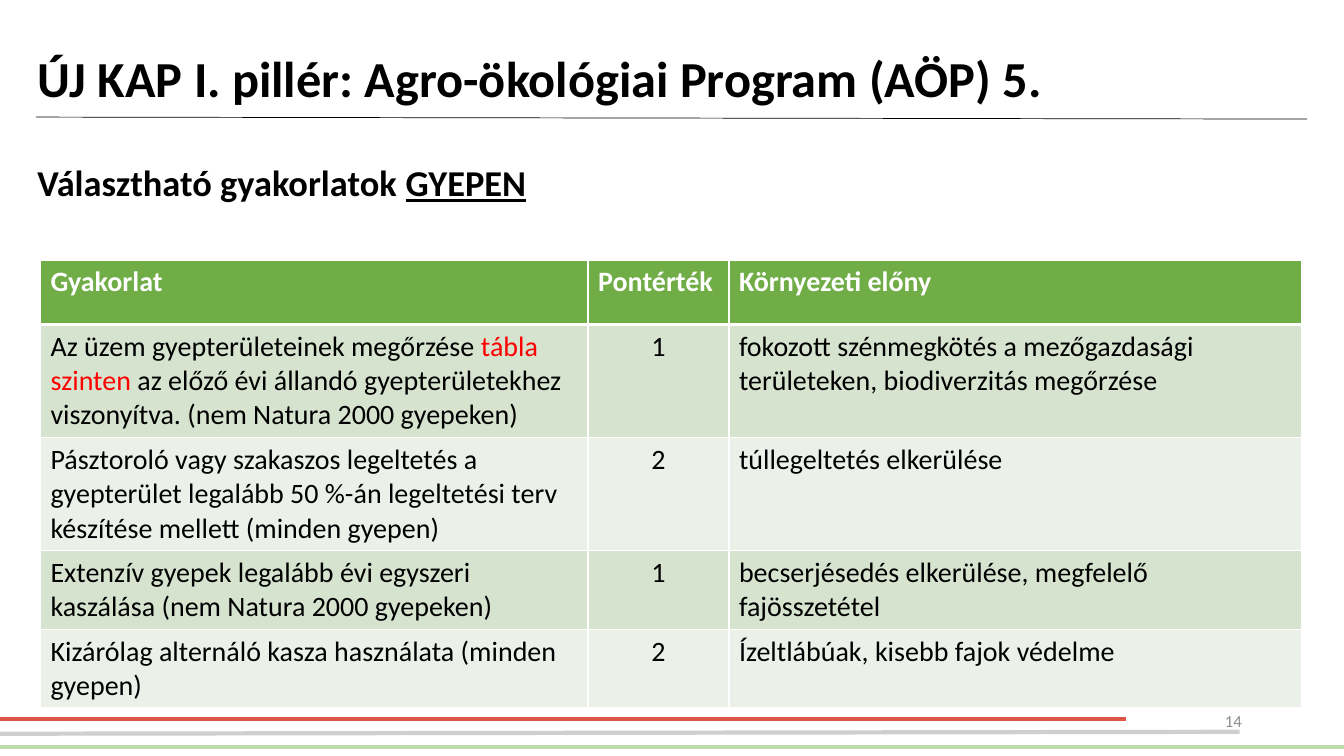
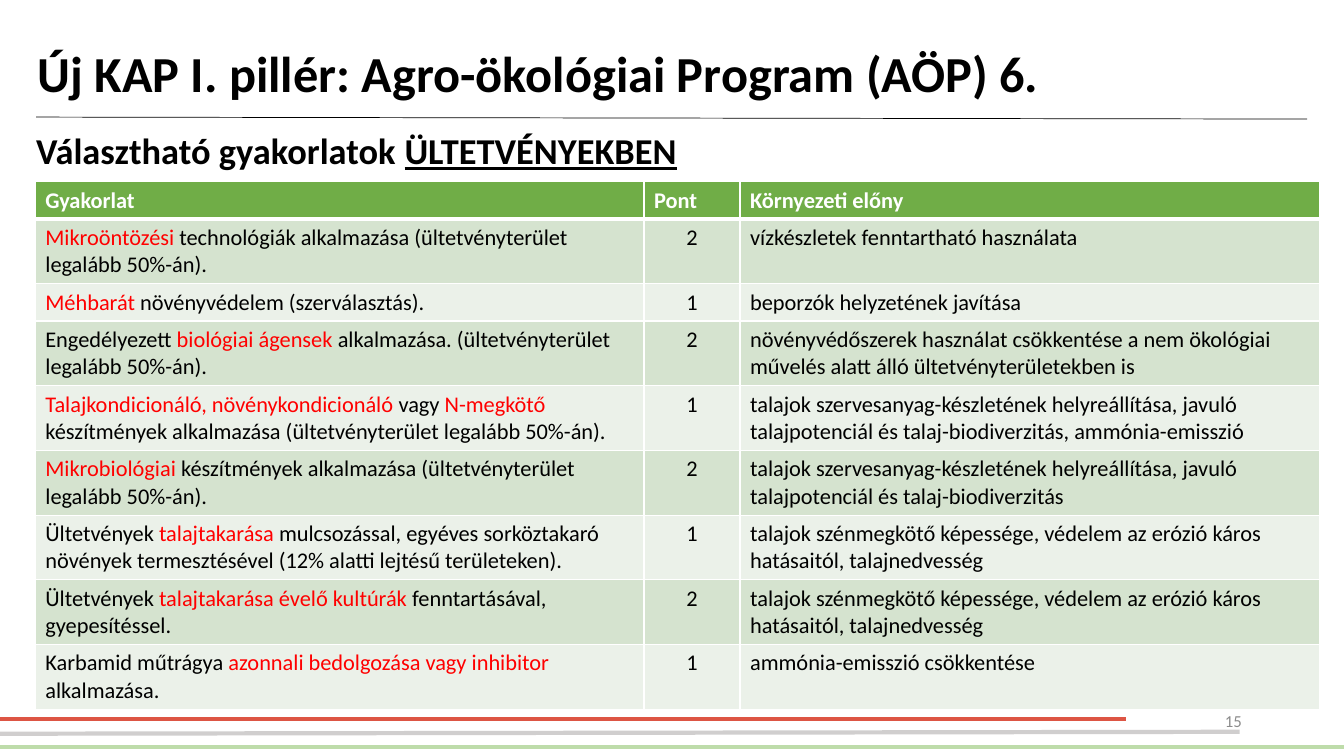
from lxml import etree
from pptx import Presentation
from pptx.dml.color import RGBColor
from pptx.enum import shapes, text
from pptx.oxml import ns, parse_xml
from pptx.util import Cm, Pt

BLACK, WHITE, RED, GREY = "000000", "FFFFFF", "FF0000", "8C8C8C"
HEADER_GREEN, BANDS = "70AD47", ("D5E3CF", "EBF1E9")
# Start x, start y, end x, end y in centimetres, colour, width in points
LINES = [
    (0, 18.11, 28.37, 18.11, "DD5544", 3),
    (0, 18.82, 33.87, 18.82, "BEDCAA", 3),
    (0, 18.49, 31.24, 18.44, "D0CECE", 3),
    (0.91, 2.95, 32.94, 3, BLACK, 0.5),
]

GRASSLAND = [
    ("Gyakorlat", "Pontérték", "Környezeti előny"),
    ("Az üzem gyepterületeinek megőrzése |tábla szinten |az előző évi állandó "
     "gyepterületekhez viszonyítva. (nem Natura 2000 gyepeken)", "1",
     "fokozott szénmegkötés a mezőgazdasági területeken, biodiverzitás megőrzése"),
    ("Pásztoroló vagy szakaszos legeltetés a gyepterület legalább 50 %-án "
     "legeltetési terv készítése mellett (minden gyepen)", "2",
     "túllegeltetés elkerülése"),
    ("Extenzív gyepek legalább évi egyszeri kaszálása (nem Natura 2000 gyepeken)", "1",
     "becserjésedés elkerülése, megfelelő fajösszetétel"),
    ("Kizárólag alternáló kasza használata (minden gyepen)", "2",
     "Ízeltlábúak, kisebb fajok védelme"),
]

SOIL_COVER_BENEFIT = ("talajok szénmegkötő képessége, védelem az erózió káros "
                      "hatásaitól, talajnedvesség")
SOIL_BENEFIT = ("talajok szervesanyag-készletének helyreállítása, javuló "
                "talajpotenciál és talaj-biodiverzitás")
PLANTATIONS = [
    ("Gyakorlat", "Pont", "Környezeti előny"),
    ("|Mikroöntözési |technológiák alkalmazása (ültetvényterület legalább 50%-án).",
     "2", "vízkészletek fenntartható használata"),
    ("|Méhbarát |növényvédelem (szerválasztás).", "1", "beporzók helyzetének javítása"),
    ("Engedélyezett |biológiai ágensek |alkalmazása. (ültetvényterület legalább 50%-án).",
     "2", "növényvédőszerek használat csökkentése a nem ökológiai művelés alatt álló "
     "ültetvényterületekben is"),
    ("|Talajkondicionáló, növénykondicionáló |vagy |N-megkötő| készítmények alkalmazása "
     "(ültetvényterület legalább 50%-án).", "1", SOIL_BENEFIT + ", ammónia-emisszió"),
    ("|Mikrobiológiai| készítmények alkalmazása (ültetvényterület legalább 50%-án).",
     "2", SOIL_BENEFIT),
    ("Ültetvények |talajtakarása |mulcsozással, egyéves sorköztakaró növények "
     "termesztésével (12% alatti lejtésű területeken).", "1", SOIL_COVER_BENEFIT),
    ("Ültetvények |talajtakarása évelő kultúrák |fenntartásával, gyepesítéssel.",
     "2", SOIL_COVER_BENEFIT),
    ("Karbamid műtrágya |azonnali bedolgozása vagy inhibitor |alkalmazása.",
     "1", "ammónia-emisszió csökkentése"),
]


def color(value):
    return RGBColor.from_string(value)


def write(frame, content, size, fill=BLACK, bold=False, align=text.PP_ALIGN.LEFT,
          accent=None, underline=False, spacing=None):
    """Write one paragraph; every second part between bars is emphasised."""
    paragraph = frame.paragraphs[0]
    paragraph.alignment = align
    if spacing:
        paragraph.line_spacing = spacing
    for index, part in enumerate(content.split("|")):
        if not part:
            continue
        emphasised = index % 2 == 1
        run = paragraph.add_run()
        run.text = part
        font = run.font
        font.name, font.size, font.bold = "Calibri", Pt(size), bold
        font.color.rgb = color(accent if emphasised and accent else fill)
        if emphasised and underline:
            font.underline = True


def set_borders(cell, top, bottom):
    """Draw white borders; top and bottom are widths in points."""
    properties = cell._tc.get_or_add_tcPr()
    for side, width in (("L", 1), ("R", 1), ("T", top), ("B", bottom)):
        properties.append(parse_xml(
            f'<a:ln{side} {ns.nsdecls("a")} w="{Pt(width)}"><a:solidFill>'
            f'<a:srgbClr val="{WHITE}"/></a:solidFill></a:ln{side}>'))


class Deck:
    def __init__(self):
        self.presentation = Presentation()
        self.presentation.slide_width = Cm(33.87)
        self.presentation.slide_height = Cm(19.05)
        self.slide = None

    def new_slide(self, title, title_top, title_height, number):
        self.slide = self.presentation.slides.add_slide(self.presentation.slide_layouts[6])
        for line in LINES:
            self.line(*line)
        self.text_box(title, 0.7, title_top, 32.4, title_height, size=36, bold=True,
                      spacing=0.9)
        self.text_box(str(number), 23.93, 17.65, 7.62, 1.02, size=12, fill=GREY,
                      align=text.PP_ALIGN.RIGHT)

    def line(self, x1, y1, x2, y2, stroke, width):
        connector = self.slide.shapes.add_connector(
            shapes.MSO_CONNECTOR.STRAIGHT, Cm(x1), Cm(y1), Cm(x2), Cm(y2))
        connector.line.color.rgb = color(stroke)
        connector.line.width = Pt(width)
        etree.SubElement(connector._element.spPr, ns.qn("a:effectLst"))

    def text_box(self, content, left, top, width, height, **style):
        box = self.slide.shapes.add_textbox(Cm(left), Cm(top), Cm(width), Cm(height))
        frame = box.text_frame
        frame.word_wrap = True
        frame.vertical_anchor = text.MSO_ANCHOR.MIDDLE
        write(frame, content, **style)

    def subtitle(self, content, left, top, width):
        self.text_box(content, left, top, width, 1.37, size=26, bold=True, underline=True)

    def table(self, rows, left, top, widths, heights, size):
        table = self.slide.shapes.add_table(
            len(rows), len(widths), Cm(left), Cm(top),
            Cm(sum(widths)), Cm(sum(heights))).table
        for column, width in zip(table.columns, widths):
            column.width = Cm(width)
        for r, (values, height) in enumerate(zip(rows, heights)):
            table.rows[r].height = Cm(height)
            header = r == 0
            for c, value in enumerate(values):
                cell = table.cell(r, c)
                set_borders(cell, top=3 if r == 1 else 1, bottom=3 if header else 1)
                cell.fill.solid()
                cell.fill.fore_color.rgb = color(HEADER_GREEN if header else BANDS[(r - 1) % 2])
                centered = c == 1 and not header
                write(cell.text_frame, value, size, fill=WHITE if header else BLACK,
                      bold=header, accent=RED,
                      align=text.PP_ALIGN.CENTER if centered else text.PP_ALIGN.LEFT)


def main():
    deck = Deck()
    deck.new_slide("ÚJ KAP I. pillér: Agro-ökológiai Program (AÖP) 5.", 0.38, 3.35, 14)
    deck.subtitle("Választható gyakorlatok |GYEPEN", 0.69, 3.91, 14.83)
    deck.table(GRASSLAND, 1.02, 6.55, (13.8, 3.55, 14.43),
               (1.63, 2.85, 2.85, 1.98, 1.98), size=20)

    deck.new_slide("Új KAP I. pillér: Agro-ökológiai Program (AÖP) 6.", 0.08, 3.68, 15)
    deck.subtitle("Választható gyakorlatok |ÜLTETVÉNYEKBEN", 0.66, 3.1, 20.93)
    one_line, two_lines = 0.94, 1.63
    deck.table(PLANTATIONS, 0.89, 4.58, (15.34, 2.42, 14.6),
               (one_line, two_lines, one_line) + (two_lines,) * 6, size=16)
    deck.presentation.save("out.pptx")


if __name__ == "__main__":
    main()
